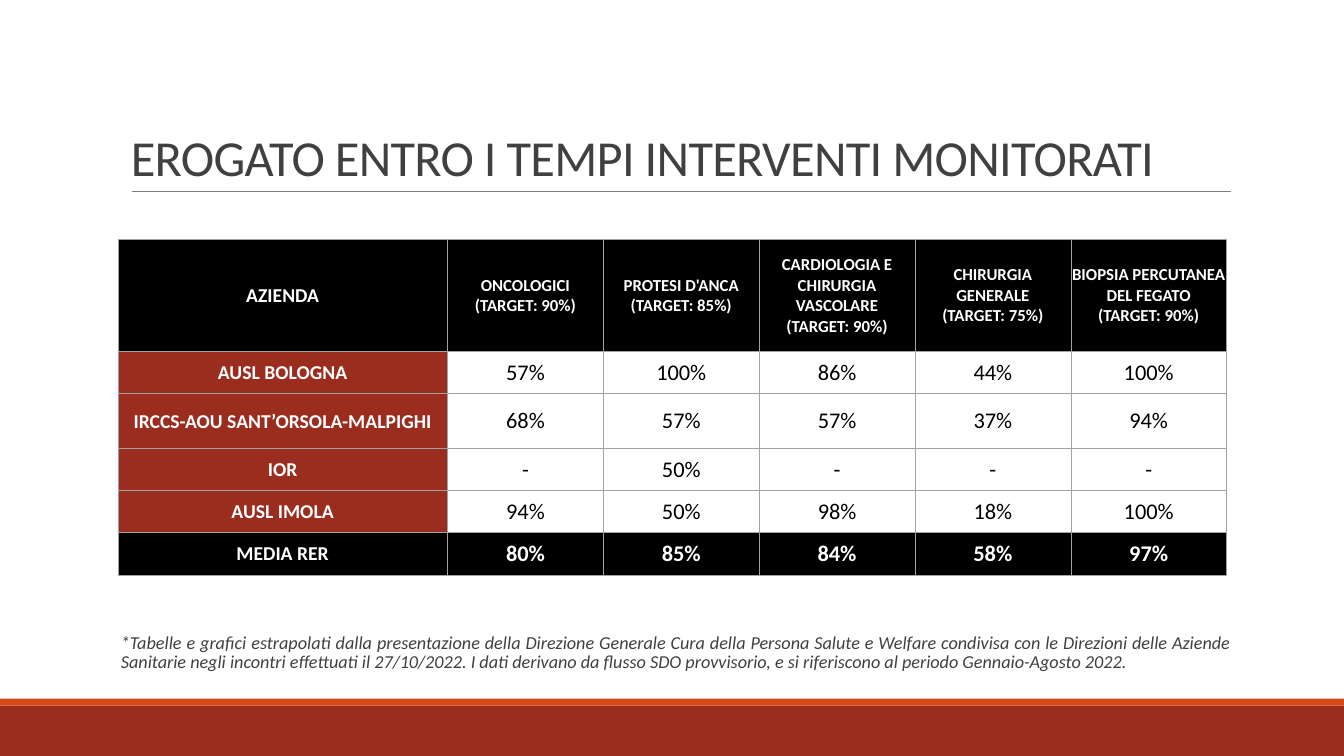
import pptx
import pptx.util
import pptx.dml.color
import pptx.enum.shapes
import pptx.enum.text
import pptx.oxml
import pptx.oxml.ns

Pt = pptx.util.Pt
RGB = pptx.dml.color.RGBColor.from_string
ALIGN = pptx.enum.text.PP_ALIGN
ANCHOR = pptx.enum.text.MSO_ANCHOR

TITLE = "EROGATO ENTRO I TEMPI INTERVENTI MONITORATI"
HEADER = [
    "AZIENDA",
    "ONCOLOGICI\n(TARGET: 90%)",
    "PROTESI D'ANCA (TARGET: 85%)",
    "CARDIOLOGIA E CHIRURGIA VASCOLARE\n(TARGET: 90%)",
    "CHIRURGIA GENERALE\n(TARGET: 75%)",
    "BIOPSIA PERCUTANEA DEL FEGATO\n(TARGET: 90%)",
]
RESULTS = [
    ("AUSL BOLOGNA", "57%", "100%", "86%", "44%", "100%"),
    ("IRCCS-AOU SANT’ORSOLA-MALPIGHI", "68%", "57%", "57%", "37%", "94%"),
    ("IOR", "-", "50%", "-", "-", "-"),
    ("AUSL IMOLA", "94%", "50%", "98%", "18%", "100%"),
]
AVERAGE = ("MEDIA RER", "80%", "85%", "84%", "58%", "97%")
NOTE = (
    "*Tabelle e grafici estrapolati dalla presentazione della Direzione Generale Cura "
    "della Persona Salute e Welfare condivisa con le Direzioni delle Aziende Sanitarie "
    "negli incontri effettuati il 27/10/2022. I dati derivano da flusso SDO provvisorio, "
    "e si riferiscono al periodo Gennaio-Agosto 2022."
)

THEME = {
    "font": "Calibri",
    "text": "404040", "rule": "808080", "grid": "A6A1A1",
    "brick": "9B2D1F", "orange": "D34817",
    "black": "000000", "white": "FFFFFF",
    "title": 36, "note": 13, "label": 14, "target": 12, "value": 16,
}
SLIDE_W, SLIDE_H = 960, 540
BANDS = [("brick", 504, 36), ("orange", 499, 5)]
TABLE_LEFT, TABLE_TOP = 84.1, 170.9
COL_WIDTHS = [235.6] + [111.3] * 5
ROW_HEIGHTS = [80, 30.2, 39, 30.2, 30.2, 30.2]


def apply(target, values):
    for name, value in values.items():
        setattr(target, name, value)


def write(tf, text, size, color, frame, para, **style):
    apply(tf, frame)
    for i, line in enumerate(text.split("\n")):
        p = tf.paragraphs[0] if i == 0 else tf.add_paragraph()
        apply(p, para)
        r = p.add_run()
        r.text = line
        apply(r.font, {"name": THEME["font"], "size": Pt(THEME[size]), **style})
        r.font.color.rgb = RGB(THEME[color])
    return r


def add_text(slide, box, *args, **style):
    sp = slide.shapes.add_textbox(*map(Pt, box))
    return write(sp.text_frame, *args, **style)


def add_borders(cell):
    tc_pr = cell._tc.get_or_add_tcPr()
    for i, side in enumerate(("lnL", "lnR", "lnT", "lnB")):
        tc_pr.insert(i, pptx.oxml.parse_xml(
            f'<a:{side} {pptx.oxml.ns.nsdecls("a")} w="{Pt(0.25)}">'
            f'<a:solidFill><a:srgbClr val="{THEME["grid"]}"/></a:solidFill></a:{side}>'))


def cell_look(row, col, last):
    size = "label" if col == 0 else "target" if row == 0 else "value"
    if row in (0, last):
        return size, "white", "black", True
    if col == 0:
        return size, "white", "brick", True
    return size, "black", None, False


def add_results(slide):
    rows = [HEADER, *RESULTS, AVERAGE]
    table = slide.shapes.add_table(
        len(rows), len(HEADER), Pt(TABLE_LEFT), Pt(TABLE_TOP),
        Pt(sum(COL_WIDTHS)), Pt(sum(ROW_HEIGHTS))).table
    apply(table, {"first_row": False, "horz_banding": False})
    for column, width in zip(table.columns, COL_WIDTHS):
        column.width = Pt(width)
    for row, height in zip(table.rows, ROW_HEIGHTS):
        row.height = Pt(height)
    cell_format = {
        "vertical_anchor": ANCHOR.MIDDLE, "margin_left": Pt(0.7),
        "margin_right": Pt(0.7), "margin_top": Pt(0.7), "margin_bottom": 0,
    }
    for i, values in enumerate(rows):
        for j, text in enumerate(values):
            cell = table.cell(i, j)
            size, color, fill, bold = cell_look(i, j, len(rows) - 1)
            apply(cell, cell_format)
            write(cell.text_frame, text, size, color, {},
                  {"alignment": ALIGN.CENTER}, bold=bold)
            if fill:
                cell.fill.solid()
                cell.fill.fore_color.rgb = RGB(THEME[fill])
            else:
                cell.fill.background()
            add_borders(cell)


def main():
    prs = pptx.Presentation()
    apply(prs, {"slide_width": Pt(SLIDE_W), "slide_height": Pt(SLIDE_H)})
    slide = prs.slides.add_slide(prs.slide_layouts[6])

    for color, top, height in BANDS:
        sp = slide.shapes.add_shape(
            pptx.enum.shapes.MSO_SHAPE.RECTANGLE, 0, Pt(top), Pt(SLIDE_W), Pt(height))
        sp.shadow.inherit = False
        sp.fill.solid()
        sp.fill.fore_color.rgb = RGB(THEME[color])
        sp.line.fill.background()

    rule = slide.shapes.add_connector(
        pptx.enum.shapes.MSO_CONNECTOR.STRAIGHT, Pt(94.3), Pt(136.8), Pt(879), Pt(136.8))
    rule.line.color.rgb = RGB(THEME["rule"])
    rule.line.width = Pt(0.5)
    rule._element.spPr.append(
        pptx.oxml.parse_xml(f'<a:effectLst {pptx.oxml.ns.nsdecls("a")}/>'))

    r = add_text(slide, (86.4, 22.6, 792, 114.2), TITLE, "title", "text",
                 {"word_wrap": True, "vertical_anchor": ANCHOR.BOTTOM},
                 {"line_spacing": 0.85})
    r.font._element.set("spc", "-50")

    add_results(slide)

    add_text(slide, (86.4, 449, 792, 36), NOTE, "note", "text",
             {"word_wrap": True, "margin_left": 0, "margin_right": 0},
             {"alignment": ALIGN.JUSTIFY, "line_spacing": 0.9}, italic=True)

    prs.save("out.pptx")


if __name__ == "__main__":
    main()
